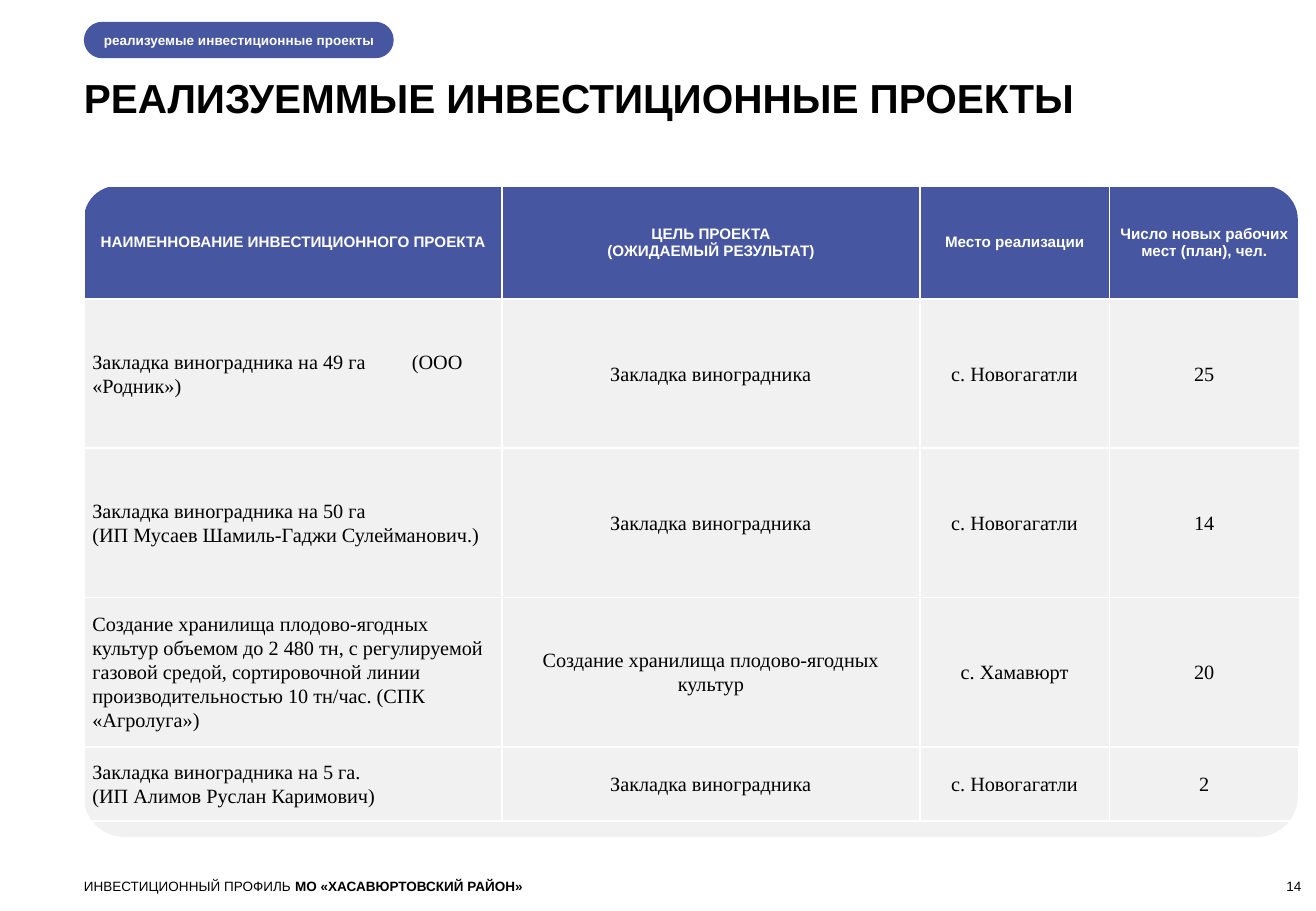
from lxml.etree import SubElement
from pptx import Presentation
from pptx.dml.color import RGBColor
from pptx.enum.shapes import MSO_SHAPE
from pptx.enum.text import MSO_ANCHOR as ANCHOR, MSO_AUTO_SIZE, PP_ALIGN as ALIGN
from pptx.oxml import parse_xml
from pptx.oxml.ns import nsdecls, qn
from pptx.util import Emu, Pt

SCALE = 9144
LEFT, TABLE_TOP, TABLE_WIDTH = 69, 153, 999
BLUE, GREY, WHITE, BLACK = "4756A0", "F1F1F1", "FFFFFF", "000000"
PLAIN_TABLE = "{2D5ABB26-0587-4C30-8999-92F81FD0307C}"

COLUMNS = [344, 344, 156, 156]
ROWS = [93, 123, 123, 123, 61]
HEADER = [
    "НАИМЕННОВАНИЕ ИНВЕСТИЦИОННОГО ПРОЕКТА",
    "ЦЕЛЬ ПРОЕКТА\n(ОЖИДАЕМЫЙ РЕЗУЛЬТАТ)",
    "Место реализации",
    "Число новых рабочих мест (план), чел.",
]
PROJECTS = [
    ("Закладка виноградника на 49 га\t(ООО «Родник»)",
     "Закладка виноградника", "с. Новогагатли", "25"),
    ("Закладка виноградника на 50 га\n(ИП Мусаев Шамиль-Гаджи Сулейманович.)",
     "Закладка виноградника", "с. Новогагатли", "14"),
    ("Создание хранилища плодово-ягодных культур объемом до 2 480 тн, "
     "с регулируемой газовой средой, сортировочной линии "
     "производительностью 10 тн/час. (СПК «Агролуга»)",
     "Создание хранилища плодово-ягодных культур", "с. Хамавюрт", "20"),
    ("Закладка виноградника на 5 га.\n(ИП Алимов Руслан Каримович)",
     "Закладка виноградника", "с. Новогагатли", "2"),
]


def px(n):
    return Emu(n * SCALE)


def rgb(value):
    return RGBColor.from_string(value)


def write(tf, text, size=8, font="Arial", color=BLACK, bold=False,
          align=ALIGN.LEFT, spacing=None, tab=None):
    """Write lines as paragraphs; a bar within a line switches bold."""
    for i, line in enumerate(text.split("\n")):
        p = tf.add_paragraph() if i else tf.paragraphs[0]
        p.alignment = align
        if spacing:
            p.line_spacing = spacing
        if "\t" in line:
            tabs = SubElement(p._p.get_or_add_pPr(), qn("a:tabLst"))
            SubElement(tabs, qn("a:tab"), pos=str(px(tab)), algn="l")
        for j, part in enumerate(line.split("|")):
            r = p.add_run()
            r.text = part
            r.font.name = font
            r.font.size = Pt(size)
            r.font.bold = bold != bool(j % 2)
            r.font.color.rgb = rgb(color)


class Deck:
    """Holds the presentation style and the current slide."""

    def __init__(self, width, height):
        self.prs = Presentation()
        self.prs.slide_width, self.prs.slide_height = px(width), px(height)
        self.s = self.prs.slides.add_slide(self.prs.slide_layouts[5])

    def frame(self, tf, anchor, left=0):
        tf.word_wrap = True
        tf.auto_size = MSO_AUTO_SIZE.NONE
        tf.vertical_anchor = anchor
        tf.margin_left = px(left)
        tf.margin_top = tf.margin_right = tf.margin_bottom = 0
        return tf

    def title(self, x, y, w, h, text, **style):
        sp = self.s.shapes.title
        sp.left, sp.top, sp.width, sp.height = map(px, (x, y, w, h))
        write(self.frame(sp.text_frame, ANCHOR.TOP), text, **style)

    def text(self, x, y, w, h, text, anchor=ANCHOR.TOP, **style):
        sp = self.s.shapes.add_textbox(*map(px, (x, y, w, h)))
        write(self.frame(sp.text_frame, anchor), text, **style)

    def panel(self, x, y, w, h, radius, fill):
        sp = self.s.shapes.add_shape(MSO_SHAPE.ROUNDED_RECTANGLE,
                                     *map(px, (x, y, w, h)))
        sp.adjustments[0] = radius
        sp.shadow.inherit = False
        sp.fill.solid()
        sp.fill.fore_color.rgb = rgb(fill)
        sp.line.fill.background()
        return sp

    def tag(self, x, y, w, h, text, **style):
        sp = self.panel(x, y, w, h, 0.5, BLUE)
        write(self.frame(sp.text_frame, ANCHOR.MIDDLE, left=12), text, **style)

    def borders(self, cell, sides):
        tc_pr = cell._tc.get_or_add_tcPr()
        for i, side in enumerate(sides):
            tc_pr.insert(i, parse_xml(
                f'<a:ln{side} {nsdecls("a")} w="12700"><a:solidFill>'
                f'<a:srgbClr val="{WHITE}"/></a:solidFill></a:ln{side}>'))

    def cell(self, cell, text, margins, fill, sides, **style):
        cell.vertical_anchor = ANCHOR.MIDDLE
        cell.margin_left = cell.margin_right = px(margins[0])
        cell.margin_top = cell.margin_bottom = px(margins[1])
        if fill:
            cell.fill.solid()
            cell.fill.fore_color.rgb = rgb(fill)
        else:
            cell.fill.background()
        self.borders(cell, sides)
        write(cell.text_frame, text, **style)

    def table(self, x, y, columns, rows, header, body):
        table = self.s.shapes.add_table(
            len(rows), len(columns),
            *map(px, (x, y, sum(columns), sum(rows)))).table
        table.first_row = table.horz_banding = False
        table._tbl.tblPr.find(qn("a:tableStyleId")).text = PLAIN_TABLE
        for column, width in zip(table.columns, columns):
            column.width = px(width)
        for row, height in zip(table.rows, rows):
            row.height = px(height)
        last_row, last_col = len(rows) - 1, len(columns) - 1
        for i, texts in enumerate([header, *body]):
            for j, text in enumerate(texts):
                cell = table.cell(i, j)
                sides = "LTB" if j == last_col else "LRTB"
                if i == 0:
                    self.cell(cell, text, (0, 24), None, sides, size=9,
                              color=WHITE, bold=True, align=ALIGN.CENTER)
                else:
                    self.cell(cell, text, (7, 0),
                              None if i == last_row else GREY, sides,
                              size=12, font="Times New Roman", spacing=1.07,
                              align=ALIGN.CENTER if j else ALIGN.LEFT, tab=263)


def main():
    deck = Deck(1083, 750)
    deck.panel(LEFT, 214, TABLE_WIDTH, 475, 0.07, GREY)
    deck.panel(LEFT, TABLE_TOP, TABLE_WIDTH, 126, 0.22, BLUE)
    deck.title(LEFT, 60, 1002, 40, "РЕАЛИЗУЕММЫЕ ИНВЕСТИЦИОННЫЕ ПРОЕКТЫ",
               size=24, bold=True)
    deck.tag(LEFT, 18, 255, 30, "реализуемые инвестиционные проекты",
             color=WHITE, bold=True)
    deck.table(LEFT, TABLE_TOP, COLUMNS, ROWS, HEADER, PROJECTS)
    deck.text(LEFT, 723, 800, 13,
              "ИНВЕСТИЦИОННЫЙ ПРОФИЛЬ |МО «ХАСАВЮРТОВСКИЙ РАЙОН»")
    deck.text(991, 723, 80, 13, "14", anchor=ANCHOR.BOTTOM, align=ALIGN.RIGHT)
    deck.prs.save("out.pptx")


if __name__ == "__main__":
    main()
